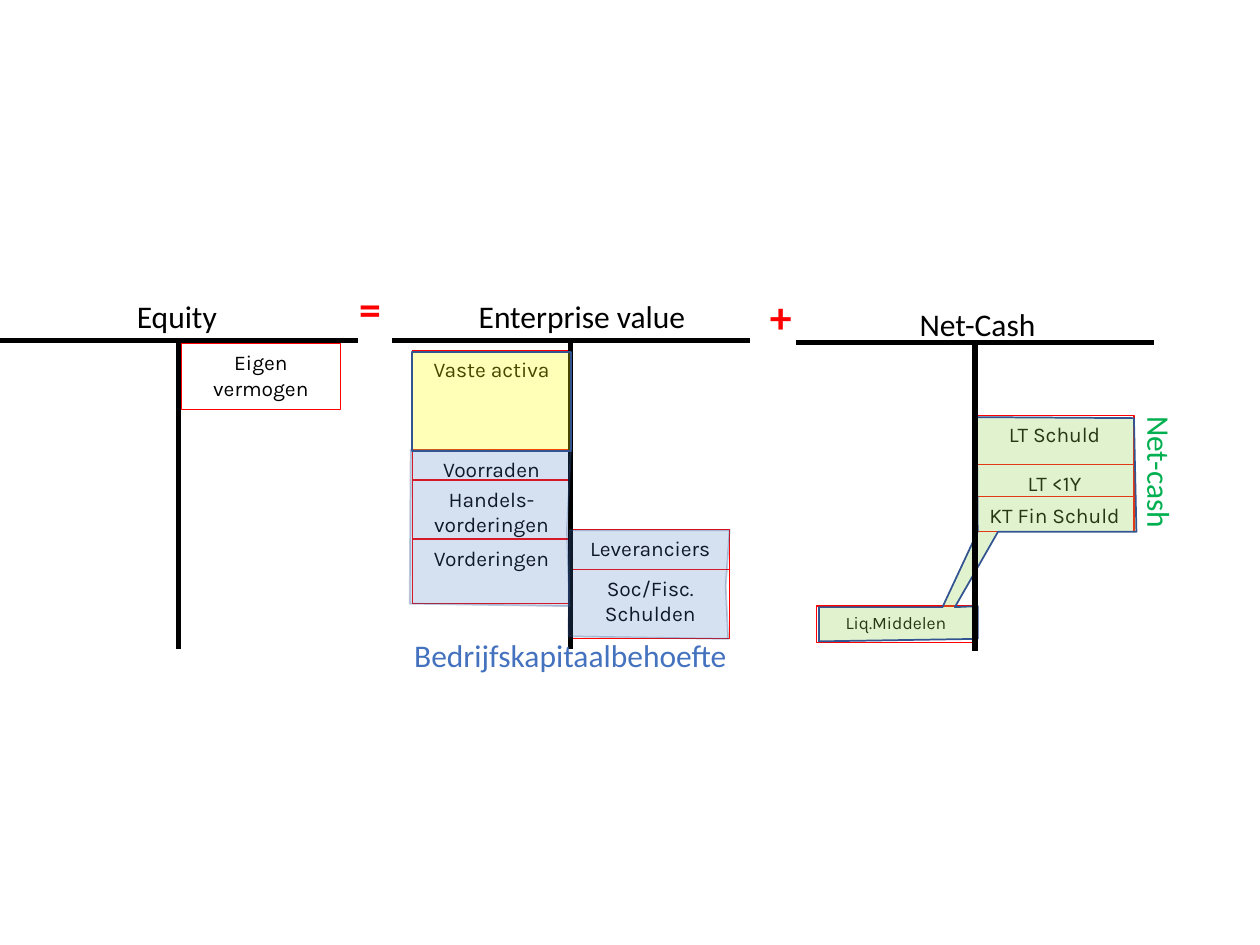
from lxml import etree
from pptx import Presentation, util as u
from pptx.dml.color import RGBColor
from pptx.enum import shapes, text
from pptx.oxml.ns import qn

COLORS = {
    "black": "000000", "white": "FFFFFF", "red": "FF0000", "green": "00B050",
    "blue": "4472BE", "navy": "325491", "edge": "2F528F",
    "yellow": "FFFF00", "lime": "92D050",
}
WIDE = 3.2  # width of a balance sheet item


def rgb(name):
    return RGBColor.from_string(COLORS[name])


def fade(fill, part):
    """Set the opacity, in percent, of a solid fill inside its element."""
    tint = fill.find(qn("a:solidFill"))[0]
    etree.SubElement(tint, qn("a:alpha")).set("val", str(part * 1000))


class Sheet:
    """Draws on one slide; all lengths are in centimetres."""

    def __init__(self, slide):
        self.shapes = slide.shapes

    def style(self, shape, fill, line, width, part=100, edge=100):
        shape.shadow.inherit = False
        shape.fill.solid()
        shape.fill.fore_color.rgb = rgb(fill)
        shape.line.color.rgb = rgb(line)
        shape.line.width = u.Pt(width)
        props = shape._element.spPr
        if part < 100:
            fade(props, part)
        if edge < 100:
            fade(props.find(qn("a:ln")), edge)

    def letter(self, shape, words, font, color, align, **frame):
        """Fill a shape with formatted text."""
        body = shape.text_frame
        for key, value in frame.items():
            setattr(body, key, value)
        body.text = words
        for para in body.paragraphs:
            para.alignment = align
            para.font.color.rgb = rgb(color)
            for key, value in font.items():
                setattr(para.font, key, value)

    def rect(self, x, y, w, h, *look):
        spot = map(u.Cm, (x, y, w, h))
        shape = self.shapes.add_shape(shapes.MSO_SHAPE.RECTANGLE, *spot)
        self.style(shape, *look)
        return shape

    def stack(self, x, y, items, size=12):
        """Place named items below each other, each with its own height."""
        for words, high in items:
            box = self.rect(x, y, WIDE, high, "white", "red", 0.75)
            self.letter(box, words, {"name": "Karla", "size": u.Pt(size)},
                        "black", text.PP_ALIGN.CENTER, word_wrap=True,
                        vertical_anchor=text.MSO_ANCHOR.TOP)
            y += high

    def label(self, words, x, y, w, h=1.02, color="black", size=18,
              bold=False, turn=0):
        box = self.shapes.add_textbox(*map(u.Cm, (x, y, w, h)))
        box.rotation = turn
        self.letter(box, words,
                    {"name": "Calibri", "size": u.Pt(size), "bold": bold},
                    color, text.PP_ALIGN.LEFT, word_wrap=False,
                    auto_size=text.MSO_AUTO_SIZE.SHAPE_TO_FIT_TEXT)

    def line(self, *ends):
        rule = self.shapes.add_connector(shapes.MSO_CONNECTOR.STRAIGHT,
                                         *map(u.Cm, ends))
        rule.line.color.rgb = rgb("black")
        rule.line.width = u.Pt(3)
        etree.SubElement(rule._element.spPr, qn("a:effectLst"))

    def ledger(self, x, y, wide=7.21, deep=6.22):
        """Draw the T of a T-account."""
        mid = x + wide / 2
        self.line(x, y, x + wide, y)
        self.line(mid, y, mid, y + deep)

    def area(self, points, *look):
        first, *rest = [(u.Cm(x), u.Cm(y)) for x, y in points]
        outline = self.shapes.build_freeform(*first)
        outline.add_line_segments(rest, close=True)
        self.style(outline.convert_to_shape(), *look)


def main():
    deck = Presentation()
    deck.slide_width, deck.slide_height = u.Cm(25.4), u.Cm(19.05)
    sheet = Sheet(deck.slides.add_slide(deck.slide_layouts[6]))

    # Enterprise value and net cash items
    sheet.stack(8.31, 7.06, [("Vaste activa", 2.01), ("Voorraden", 0.61),
                             ("Handels-vorderingen", 1.19),
                             ("Vorderingen", 1.3)])
    sheet.stack(11.51, 10.67, [("Leveranciers", 0.81),
                               ("Soc/Fisc.\nSchulden", 1.4)])
    sheet.stack(19.66, 8.38, [("LT Schuld", 0.99), ("LT <1Y", 0.64),
                              ("KT Fin Schuld", 0.71)])
    sheet.stack(16.46, 12.22, [("Liq.Middelen", 0.74)], size=10)
    sheet.ledger(7.9, 6.86)

    # Tinted groups
    tint = ("blue", "edge", 1, 22, 31)
    sheet.area([(8.28, 9.07), (11.51, 9.09), (11.43, 10.69),
                (11.48, 12.22), (8.26, 12.17)], *tint)
    sheet.rect(8.31, 7.09, WIDE, 2.01, "yellow", "navy", 1, 28)
    sheet.area([(20.12, 10.72), (22.91, 10.72), (22.86, 8.43), (19.69, 8.41),
                (19.71, 10.72), (19, 12.24), (16.51, 12.24), (16.51, 12.93),
                (19.71, 12.88), (19.71, 12.22), (19.25, 12.24)],
               "lime", "navy", 1, 27)
    sheet.area([(11.48, 10.69), (14.71, 10.69), (14.63, 11.81),
                (14.68, 12.88), (11.46, 12.83)], *tint)

    # Net cash and equity accounts
    sheet.ledger(16.05, 6.91)
    sheet.ledger(0, 6.86)
    sheet.stack(3.66, 6.93, [("Eigen vermogen", 1.32)])

    sheet.label("Equity", 2.51, 5.87, 2.13)
    sheet.label("Enterprise value", 9.4, 5.87, 4.72)
    sheet.label("Net-Cash", 18.29, 6.02, 2.9)
    sheet.label("Net-cash", 21.97, 9.04, 2.82, color="green", turn=90)
    sheet.label("Bedrijfskapitaalbehoefte", 8.1, 12.7, 6.88, color="blue")
    for sign, x, y in (("=", 6.99, 5.56), ("+", 15.27, 5.72)):
        sheet.label(sign, x, y, 0.97, 1.32, "red", 25, True)

    deck.save("out.pptx")


if __name__ == "__main__":
    main()
